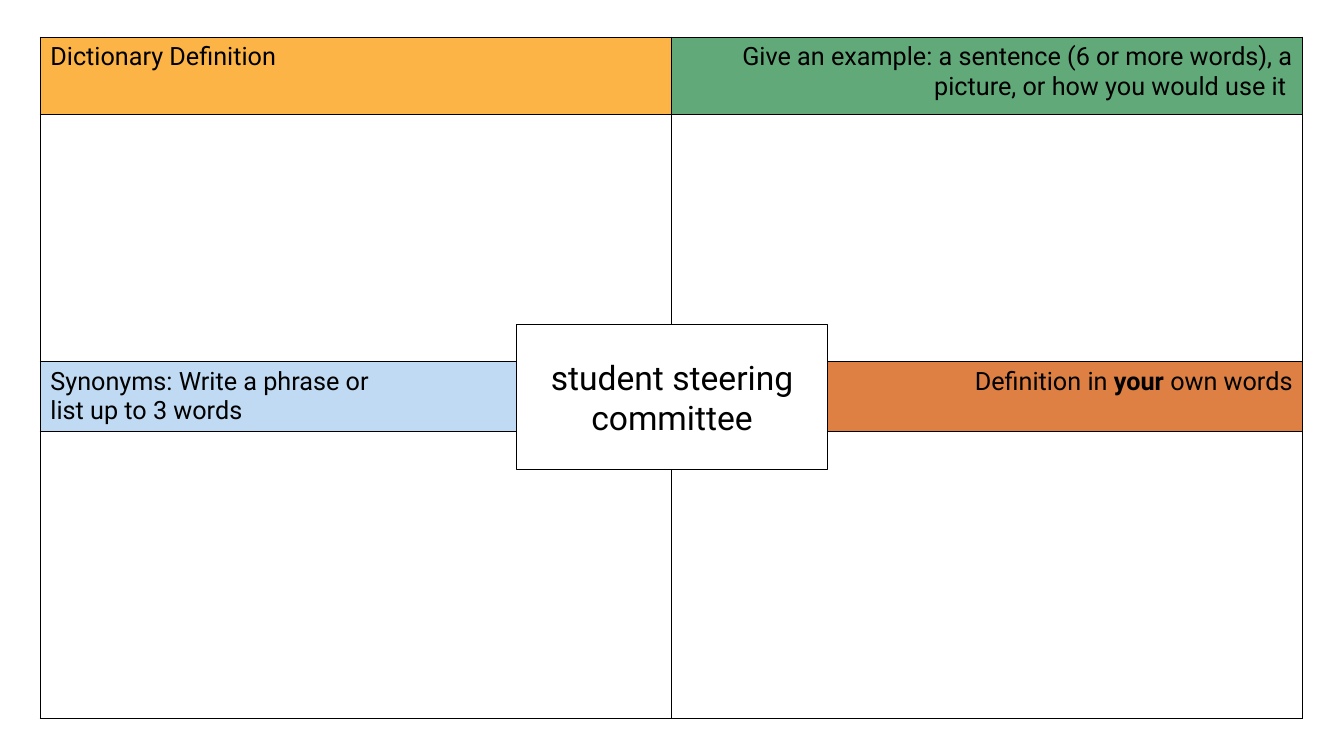
"""Build a four-square vocabulary slide around one term."""
import pptx
import pptx.util
import pptx.dml.color
import pptx.enum.shapes
import pptx.enum.text
import pptx.oxml
import pptx.oxml.ns

Inch = pptx.util.Inches
Align = pptx.enum.text.PP_ALIGN
THEME = {
    "ink": "000000", "paper": "FFFFFF",
    "gold": "FCB447", "green": "62A97A", "sky": "BFDAF2", "rust": "DE8043",
    "font": "Roboto", "label": 18, "term": 24, "line": 1,
}


def color(name):
    return pptx.dml.color.RGBColor.from_string(THEME[name])


def write(frame, lines, align, size):
    """Fill a text frame; odd runs of each line are bold."""
    for row, runs in enumerate(lines):
        para = frame.add_paragraph() if row else frame.paragraphs[0]
        para.alignment = align
        for spot, text in enumerate(runs):
            run = para.add_run()
            run.text = text
            style = {"name": THEME["font"], "size": pptx.util.Pt(THEME[size]),
                     "bold": spot % 2 == 1}
            for key, value in style.items():
                setattr(run.font, key, value)
            run.font.color.rgb = color("ink")


deck = pptx.Presentation()
deck.slide_width, deck.slide_height = Inch(13.33), Inch(7.5)
slide = deck.slides.add_slide(deck.slide_layouts[6])

left, top, width = 0.4, 0.37, 12.52
rows = [0.77, 2.45, 0.69, 2.85]
heads = {
    (0, 0): ("gold", [["Dictionary Definition"]]),
    (0, 1): ("green", [["Give an example: a sentence (6 or more words), a "
                        "picture, or how you would use it "]]),
    (2, 0): ("sky", [["Synonyms: Write a phrase or"], ["list up to 3 words"]]),
    (2, 1): ("rust", [["Definition in ", "your ", "own words"]]),
}
sides = [Align.LEFT, Align.RIGHT]

grid = slide.shapes.add_table(len(rows), len(sides), Inch(left), Inch(top),
                              Inch(width), Inch(sum(rows))).table
for col in grid.columns:
    col.width = Inch(width / len(sides))
for row, tall in enumerate(rows):
    grid.rows[row].height = Inch(tall)
    for col, side in enumerate(sides):
        cell = grid.cell(row, col)
        fill, lines = heads.get((row, col), ("paper", []))
        cell.fill.solid()
        cell.fill.fore_color.rgb = color(fill)
        write(cell.text_frame, lines, side, "label")
        props = cell._tc.get_or_add_tcPr()
        for spot, edge in enumerate("LRTB"):
            props.insert(spot, pptx.oxml.parse_xml(
                f'<a:ln{edge} {pptx.oxml.ns.nsdecls("a")} '
                f'w="{pptx.util.Pt(THEME["line"])}"><a:solidFill>'
                f'<a:srgbClr val="{THEME["ink"]}"/></a:solidFill></a:ln{edge}>'))

term = slide.shapes.add_shape(pptx.enum.shapes.MSO_SHAPE.RECTANGLE,
                              Inch(5.12), Inch(3.22), Inch(3.09), Inch(1.44))
term.shadow.inherit = False
term.fill.solid()
term.fill.fore_color.rgb = color("paper")
term.line.color.rgb = color("ink")
term.line.width = pptx.util.Pt(THEME["line"])
layout = {"word_wrap": True, "vertical_anchor": pptx.enum.text.MSO_ANCHOR.MIDDLE}
for key, value in layout.items():
    setattr(term.text_frame, key, value)
write(term.text_frame, [["student steering committee"]], Align.CENTER, "term")

deck.save("out.pptx")
